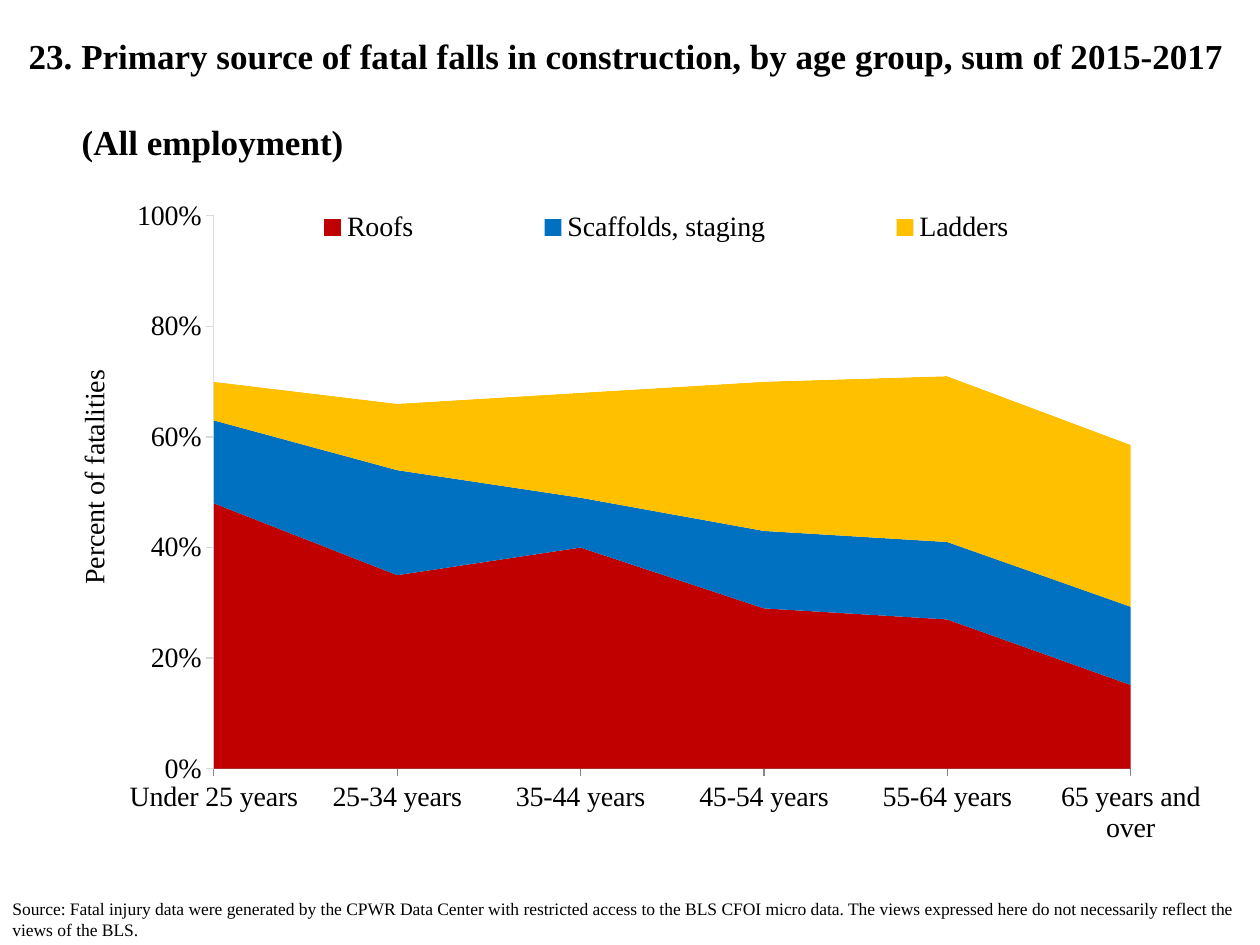
from dataclasses import dataclass

from lxml import etree
from pptx import Presentation
from pptx.chart.data import CategoryChartData
from pptx.dml.color import RGBColor
from pptx.enum.chart import XL_CHART_TYPE, XL_LEGEND_POSITION, XL_TICK_MARK
from pptx.enum.text import MSO_ANCHOR
from pptx.oxml.ns import qn
from pptx.util import Inches, Pt

AREA = XL_CHART_TYPE.AREA_STACKED_100
TOP = XL_LEGEND_POSITION.TOP
OUTSIDE = XL_TICK_MARK.OUTSIDE
NO_TICK = XL_TICK_MARK.NONE
MIDDLE = MSO_ANCHOR.MIDDLE
UPPER = MSO_ANCHOR.TOP


@dataclass(frozen=True)
class Theme:
    font: str = "Times New Roman"
    text: str = "000000"
    value_line: str = "D9D9D9"
    category_line: str = "868686"
    title_size: int = 20
    chart_size: int = 16
    source_size: int = 10


THEME = Theme()
WIDTH, HEIGHT = Inches(10), Inches(7.5)
AGES = ["Under 25 years", "25-34 years", "35-44 years",
        "45-54 years", "55-64 years", "65 years and over"]
SERIES = [
    ("Roofs", "C00000", (48, 35, 40, 29, 27, 15)),
    ("Scaffolds, staging", "0070C0", (15, 19, 9, 14, 14, 14)),
    ("Ladders", "FFC000", (7, 12, 19, 27, 30, 29)),
    ("Series 4", "FFFFFF", (30, 34, 32, 30, 29, 41)),
]
HIDDEN_ENTRY = 3
TITLE = ["23. Primary source of fatal falls in construction, by age group, sum of 2015-2017",
         "(All employment)"]
SOURCE = ("Source: Fatal injury data were generated by the CPWR Data Center with restricted "
          "access to the BLS CFOI micro data. The views expressed here do not necessarily "
          "reflect the views of the BLS.")


def place(x, y, w, h):
    return int(WIDTH * x), int(HEIGHT * y), int(WIDTH * w), int(HEIGHT * h)


def set_font(font, size, bold=False):
    formats = {"name": THEME.font, "size": Pt(size), "bold": bold}
    for name, value in formats.items():
        setattr(font, name, value)
    font.color.rgb = RGBColor.from_string(THEME.text)


def add_text(s, box, lines, size, anchor, bold=False, gap=0, indent=0):
    tf = s.shapes.add_textbox(*place(*box)).text_frame
    tf.word_wrap = True
    tf.vertical_anchor = anchor
    for i, line in enumerate(lines):
        p = tf.add_paragraph() if i else tf.paragraphs[0]
        r = p.add_run()
        r.text = line
        set_font(r.font, size, bold)
        if i:
            p.space_before = Pt(gap)
            p._p.get_or_add_pPr().set("marL", str(Inches(indent)))


def set_layout(parent, index, inner=False, **shares):
    for old in parent.findall(qn("c:layout")):
        parent.remove(old)
    layout = etree.Element(qn("c:layout"))
    manual = etree.SubElement(layout, qn("c:manualLayout"))
    values = {"layoutTarget": "inner"} if inner else {}
    values.update({"xMode": "edge", "yMode": "edge"}, **shares)
    for name, value in values.items():
        etree.SubElement(manual, qn(f"c:{name}")).set("val", str(value))
    parent.insert(index, layout)


def format_axis(axis, line):
    formats = {"has_major_gridlines": False, "major_tick_mark": OUTSIDE,
               "minor_tick_mark": NO_TICK}
    for name, value in formats.items():
        setattr(axis, name, value)
    axis.format.line.color.rgb = RGBColor.from_string(line)
    axis.format.line.width = Pt(0.75)
    set_font(axis.tick_labels.font, THEME.chart_size)


def format_value_axis(axis):
    format_axis(axis, THEME.value_line)
    for name, value in {"minimum_scale": 0, "maximum_scale": 1, "major_unit": 0.2}.items():
        setattr(axis, name, value)
    axis.tick_labels.number_format = "0%"
    axis.tick_labels.number_format_is_linked = False
    title = axis.axis_title
    p = title.text_frame.paragraphs[0]
    r = p.add_run()
    r.text = "Percent of fatalities"
    set_font(r.font, THEME.chart_size)
    body = title.text_frame._txBody.find(qn("a:bodyPr"))
    body.set("rot", "-5400000")
    body.set("vert", "horz")
    set_layout(title._element, 1, x=0.03, y=0.32)


def format_legend(chart):
    chart.has_legend = True
    legend = chart.legend
    legend.position = TOP
    legend.include_in_layout = False
    set_font(legend.font, THEME.chart_size)
    entry = etree.Element(qn("c:legendEntry"))
    etree.SubElement(entry, qn("c:idx")).set("val", str(HIDDEN_ENTRY))
    etree.SubElement(entry, qn("c:delete")).set("val", "1")
    legend._element.insert(1, entry)
    set_layout(legend._element, 2, x=0.14, y=0.1, w=0.78, h=0.06)


def add_area_chart(s, box):
    data = CategoryChartData()
    data.categories = AGES
    for name, _, values in SERIES:
        data.add_series(name, values)
    chart = s.shapes.add_chart(AREA, *place(*box), data).chart
    chart.has_title = False
    set_font(chart.font, THEME.chart_size)
    for series, (_, color, _) in zip(chart.plots[0].series, SERIES):
        series.format.fill.solid()
        series.format.fill.fore_color.rgb = RGBColor.from_string(color)
        series.format.line.fill.background()
    format_axis(chart.category_axis, THEME.category_line)
    format_value_axis(chart.value_axis)
    format_legend(chart)
    plot_area = chart._chartSpace.chart.plotArea
    set_layout(plot_area, 0, inner=True, x=0.15, y=0.114, w=0.77, h=0.763)


def main():
    prs = Presentation()
    prs.slide_width, prs.slide_height = WIDTH, HEIGHT
    s = prs.slides.add_slide(prs.slide_layouts[6])
    add_area_chart(s, (0.028, 0.141, 0.945, 0.767))
    add_text(s, (0.013, 0.048, 0.973, 0.112), TITLE, THEME.title_size, MIDDLE,
             bold=True, gap=25, indent=0.42)
    add_text(s, (0, 0.944, 1, 0.058), [SOURCE], THEME.source_size, UPPER)
    prs.save("out.pptx")


if __name__ == "__main__":
    main()
